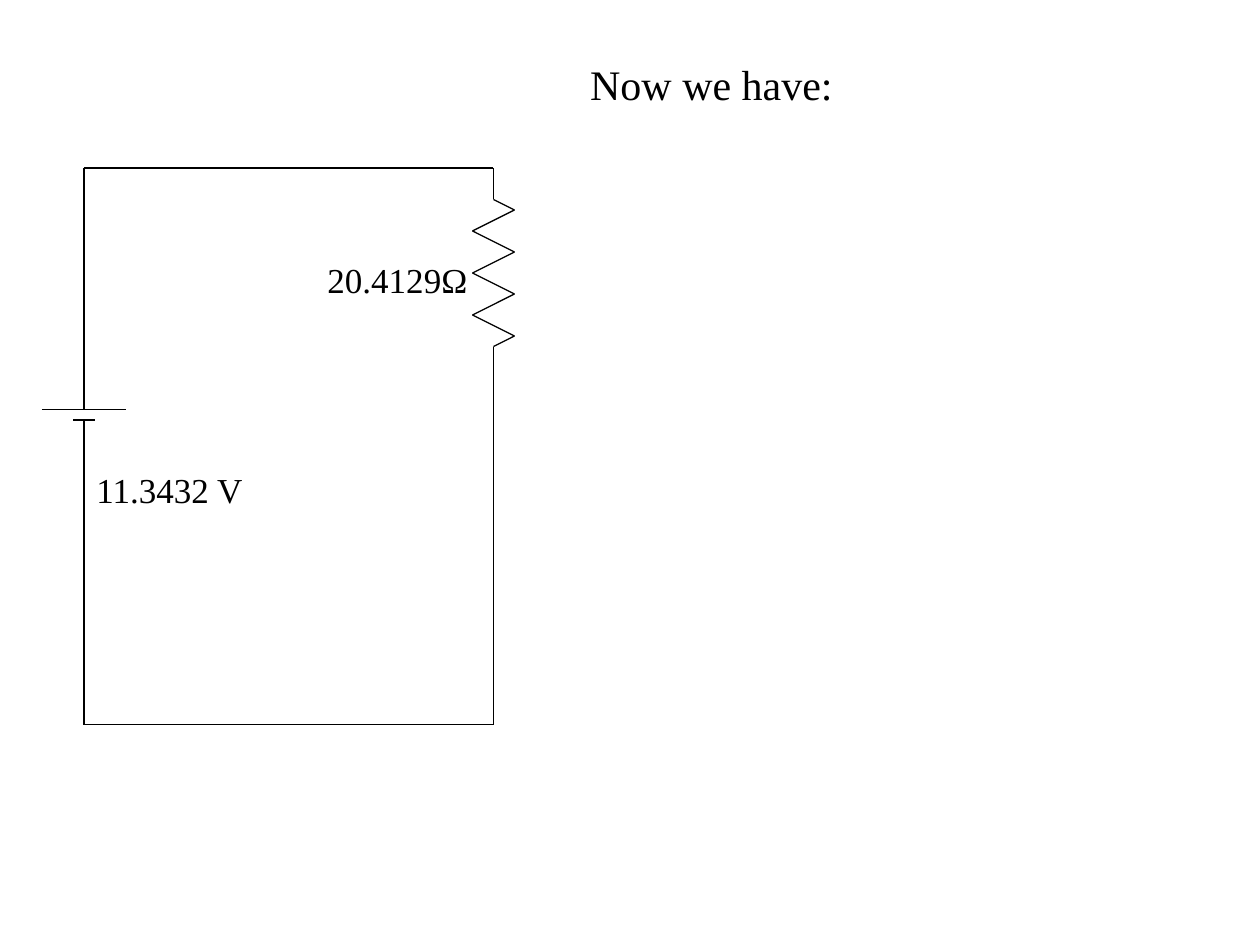
from itertools import pairwise

from lxml import etree
from pptx import Presentation
from pptx import util as u
from pptx.dml.color import RGBColor
from pptx.enum import shapes, text
from pptx.oxml.ns import qn

EMU_PER_PX = u.Inches(1) // 120
BLACK = RGBColor(0, 0, 0)
WHITE = RGBColor(255, 255, 255)
FONT = "Times New Roman"


def px(length):
    return u.Emu(length * EMU_PER_PX)


def draw_path(slide, *points):
    """Join consecutive points with thin straight lines."""
    for start, end in pairwise(points):
        line = slide.shapes.add_connector(
            shapes.MSO_CONNECTOR.STRAIGHT, *map(px, start + end))
        line.line.color.rgb = BLACK
        line.line.width = u.Pt(0.75)
        etree.SubElement(line._element.spPr, qn("a:effectLst"))


def write_text(shape, content, size):
    frame = shape.text_frame
    frame.text = content
    frame.vertical_anchor = text.MSO_ANCHOR.TOP
    paragraph = frame.paragraphs[0]
    paragraph.alignment = text.PP_ALIGN.LEFT
    paragraph.font.name = FONT
    paragraph.font.size = u.Pt(size)
    paragraph.font.color.rgb = BLACK


def add_label(slide, left, top, width, height, content):
    label = slide.shapes.add_textbox(*map(px, (left, top, width, height)))
    label.text_frame.word_wrap = False
    label.text_frame.auto_size = text.MSO_AUTO_SIZE.SHAPE_TO_FIT_TEXT
    write_text(label, content, 20)


def add_title(slide, left, top, width, height):
    title = slide.shapes.title
    title.left, title.top, title.width, title.height = map(
        px, (left, top, width, height))
    title.text_frame.word_wrap = True
    write_text(title, "Now we have:", 24)


def add_resistor(slide, x, top, teeth=7, step=20, reach=20):
    """Draw a vertical zigzag and return the y of its lower end."""
    peaks = [(x + reach * (-1) ** i, top + step // 2 + step * i)
             for i in range(teeth)]
    bottom = top + step * teeth
    draw_path(slide, (x, top), *peaks, (x, bottom))
    return bottom


def add_battery(slide, x, top, gap=10):
    """Draw the two plates and return the y of the lower one."""
    for y, half_width in ((top, 40), (top + gap, 10)):
        draw_path(slide, (x - half_width, y), (x + half_width, y))
    return top + gap


def add_circuit(slide, left, top, width, height):
    right, bottom = left + width, top + height
    resistor_top, battery_top = top + 30, top + 230
    resistor_bottom = add_resistor(slide, right, resistor_top)
    battery_bottom = add_battery(slide, left, battery_top)
    draw_path(slide, (left, battery_top), (left, top), (right, top),
              (right, resistor_top))
    draw_path(slide, (right, resistor_bottom), (right, bottom),
              (left, bottom), (left, battery_bottom))
    add_label(slide, left + 220, top + 80, 157, 52, "20.4129Ω")
    add_label(slide, left, top + 280, 166, 52, "11.3432 V")


def main():
    presentation = Presentation()
    presentation.slide_width, presentation.slide_height = px(1200), px(900)
    slide = presentation.slides.add_slide(presentation.slide_layouts[5])
    slide.background.fill.solid()
    slide.background.fill.fore_color.rgb = WHITE
    add_circuit(slide, 80, 160, 390, 530)
    add_title(slide, 550, 50, 550, 108)
    presentation.save("out.pptx")


if __name__ == "__main__":
    main()
